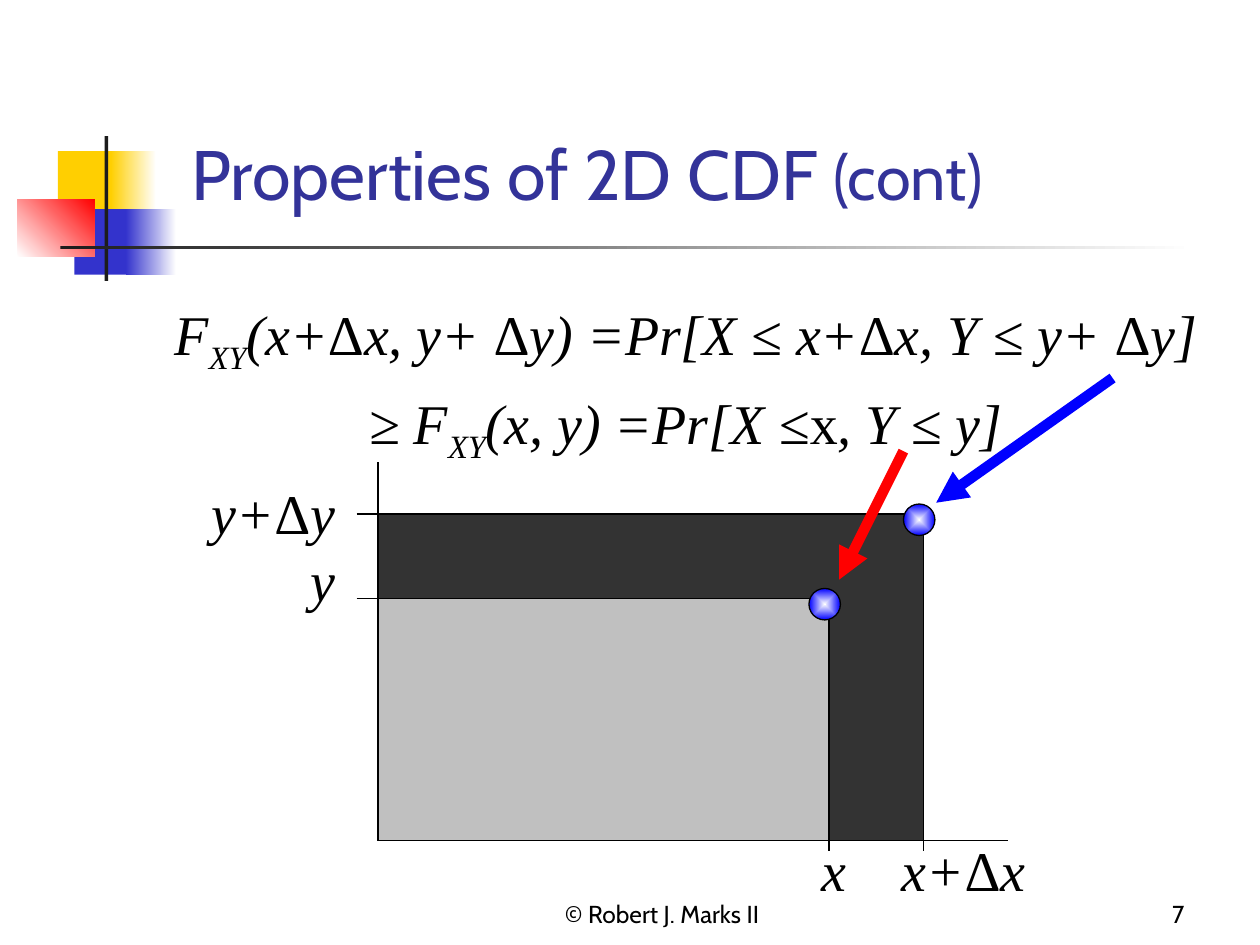
from dataclasses import dataclass
from typing import NamedTuple

from lxml.etree import SubElement
from pptx import Presentation
from pptx.dml.color import RGBColor
from pptx.enum.shapes import MSO_CONNECTOR as Conn, MSO_SHAPE as Kind
from pptx.enum.text import MSO_ANCHOR as Anchor, MSO_AUTO_SIZE as Fit, PP_ALIGN as Align
from pptx.oxml.ns import qn
from pptx.util import Inches, Pt

HUE = {
    "gold": "FFCF01", "navy": "3333CC", "red": "FF0000", "blue": "0000FF",
    "ink": "1C1C1C", "title": "333399", "black": "000000", "white": "FFFFFF",
    "dark": "333333", "light": "C0C0C0",
}
SANS, SERIF = "Cabin", "Times New Roman"


class Box(NamedTuple):
    left: float
    top: float
    width: float
    height: float


class Run(NamedTuple):
    text: str
    size: float = 32
    slant: bool = True
    sub: bool = False
    font: str = SERIF
    hue: str = "black"


@dataclass
class Block:
    box: Box
    hues: tuple[str, ...]  # one for a plain fill, two for a gradient
    angle: float = 0
    kind: Kind = Kind.RECTANGLE
    edged: bool = False


@dataclass
class Line:
    start: tuple[float, float]
    end: tuple[float, float]
    hue: str = "black"
    width: float = 0.75
    arrow: bool = False


def rgb(hue: str) -> RGBColor:
    return RGBColor.from_string(HUE[hue])


def put_block(shapes, block: Block) -> None:
    shape = shapes.add_shape(block.kind, *map(Inches, block.box))
    shape.shadow.inherit = False
    fill = shape.fill
    if len(block.hues) == 1:
        fill.solid()
        fill.fore_color.rgb = rgb(block.hues[0])
    else:
        fill.gradient()
        fill.gradient_angle = block.angle
        for stop, hue in zip(fill.gradient_stops, block.hues):
            stop.color.rgb = rgb(hue)
        if block.kind == Kind.OVAL:  # glow from the centre
            grad = shape._element.spPr.find(qn("a:gradFill"))
            grad.remove(grad.find(qn("a:lin")))
            glow = SubElement(grad, qn("a:path"), {"path": "shape"})
            SubElement(glow, qn("a:fillToRect"), dict.fromkeys("ltrb", "50000"))
    if block.edged:
        shape.line.color.rgb = rgb("black")
        shape.line.width = Pt(0.75)
    else:
        shape.line.fill.background()


def put_line(shapes, line: Line) -> None:
    conn = shapes.add_connector(Conn.STRAIGHT, *map(Inches, line.start + line.end))
    conn.line.color.rgb = rgb(line.hue)
    conn.line.width = Pt(line.width)
    props = conn._element.spPr
    if line.arrow:
        SubElement(props.find(qn("a:ln")), qn("a:tailEnd"), {"type": "triangle"})
    SubElement(props, qn("a:effectLst"))


def fill_text(shape, paras: list[list[Run]], align=Align.LEFT,
              anchor=Anchor.TOP, gap: float = 0) -> None:
    frame = shape.text_frame
    frame.word_wrap = True
    frame.auto_size = Fit.NONE
    frame.vertical_anchor = anchor
    for i, runs in enumerate(paras):
        para = frame.add_paragraph() if i else frame.paragraphs[0]
        para.alignment = align
        para.space_before = Pt(gap)
        for item in runs:
            run = para.add_run()
            run.text = item.text
            font = run.font
            font.name, font.size, font.italic = item.font, Pt(item.size), item.slant
            font.color.rgb = rgb(item.hue)
            if item.sub:
                run._r.get_or_add_rPr().set("baseline", "-25000")


def put_text(shapes, box: Box, paras: list[list[Run]], **style):
    shape = shapes.add_textbox(*map(Inches, box))
    fill_text(shape, paras, **style)
    return shape


def flat(text: str) -> Run:
    return Run(text, slant=False)


deck = Presentation()
deck.slide_width, deck.slide_height = Inches(10), Inches(7.5)
slide = deck.slides.add_slide(deck.slide_layouts[5])
shapes = slide.shapes

# Corner ornament and rule
for block in (
    Block(Box(0.46, 1.2, 0.48, 0.52), ("gold",)),
    Block(Box(0.88, 1.2, 0.36, 0.52), ("gold", "white")),
    Block(Box(0.59, 1.66, 0.46, 0.52), ("navy",)),
    Block(Box(1, 1.66, 0.4, 0.52), ("navy", "white")),
    Block(Box(0.14, 1.58, 0.61, 0.46), ("white", "red"), angle=45),
    Block(Box(0.83, 1.08, 0.03, 1.15), ("ink",)),
    Block(Box(0.48, 1.95, 9, 0.03), ("ink", "white")),
):
    put_block(shapes, block)

# Footer
for box, text, align in (
    (Box(3.67, 6.92, 3.17, 0.5), "© Robert J. Marks II", Align.CENTER),
    (Box(7.42, 6.92, 2.08, 0.5), "7", Align.RIGHT),
):
    put_text(shapes, box, [[Run(text, 14, False, font=SANS)]],
             align=align, anchor=Anchor.BOTTOM)

# Title
title = shapes.title
title.left, title.top, title.width, title.height = map(Inches, Box(1.42, 0.5, 7.11, 1.25))
fill_text(title, [[
    Run("Properties of 2D CDF ", 40, False, font=SANS, hue="title"),
    Run("(cont)", 36, False, font=SANS, hue="title"),
]], anchor=Anchor.BOTTOM)

# Formulas
delta, less, pair = flat("Δ"), flat("≤ "), Run("XY", sub=True)
put_text(shapes, Box(1.25, 2.33, 8.5, 1.5), [
    [Run("F"), pair, Run("(x+"), delta, Run("x, y+ "), delta, Run("y) =Pr[X "),
     less, Run("x+"), delta, Run("x, Y "), less, Run("y+ "), delta, Run("y] ")],
    [Run("≥ F"), pair, Run("(x, y) =Pr[X "), flat("≤x"), Run(", Y "), less, Run("y] ")],
], align=Align.CENTER, gap=7)

# Nested regions, each with its corner at (x, y)
plot = shapes.add_group_shape().shapes
zero, base = 3, 6.67
outer, inner = (7.33, 4.08), (6.58, 4.75)
for (x, y), hue in ((outer, "dark"), (inner, "light")):
    put_block(plot, Block(Box(zero, y, x - zero, base - y), (hue,), edged=True))

# Axes and ticks
put_line(plot, Line((zero, 3.67), (zero, base)))
put_line(plot, Line((zero, base), (8, base)))
for (x, y), top in ((outer, 6.33), (inner, 6.5)):
    put_line(plot, Line((2.83, y), (3.08, y)))
    put_line(plot, Line((x, top), (x, 6.75)))

# Axis labels
label = put_text(plot, Box(6.42, 6.58, 2.09, 0.63),
                 [[Run("x\tx+"), delta, Run("x")]])
props = label.text_frame.paragraphs[0]._p.get_or_add_pPr()
tabs = SubElement(props, qn("a:tabLst"))
SubElement(tabs, qn("a:tab"), {"pos": str(Inches(0.64)), "algn": "l"})
put_text(plot, Box(1.5, 3.75, 1.26, 1.17),
         [[Run("y+"), delta, Run("y")], [Run("y")]], align=Align.RIGHT)

# Corner points
for left, top in ((6.42, 4.67), (7.17, 4)):
    put_block(plot, Block(Box(left, top, 0.25, 0.25), ("white", "blue"),
                          kind=Kind.OVAL, edged=True))

# Arrows from the formulas to the points
put_line(shapes, Line((8.83, 3), (7.43, 3.99), "blue", 6, True))
put_line(shapes, Line((7.17, 3.58), (6.66, 4.6), "red", 6, True))

deck.save("out.pptx")
